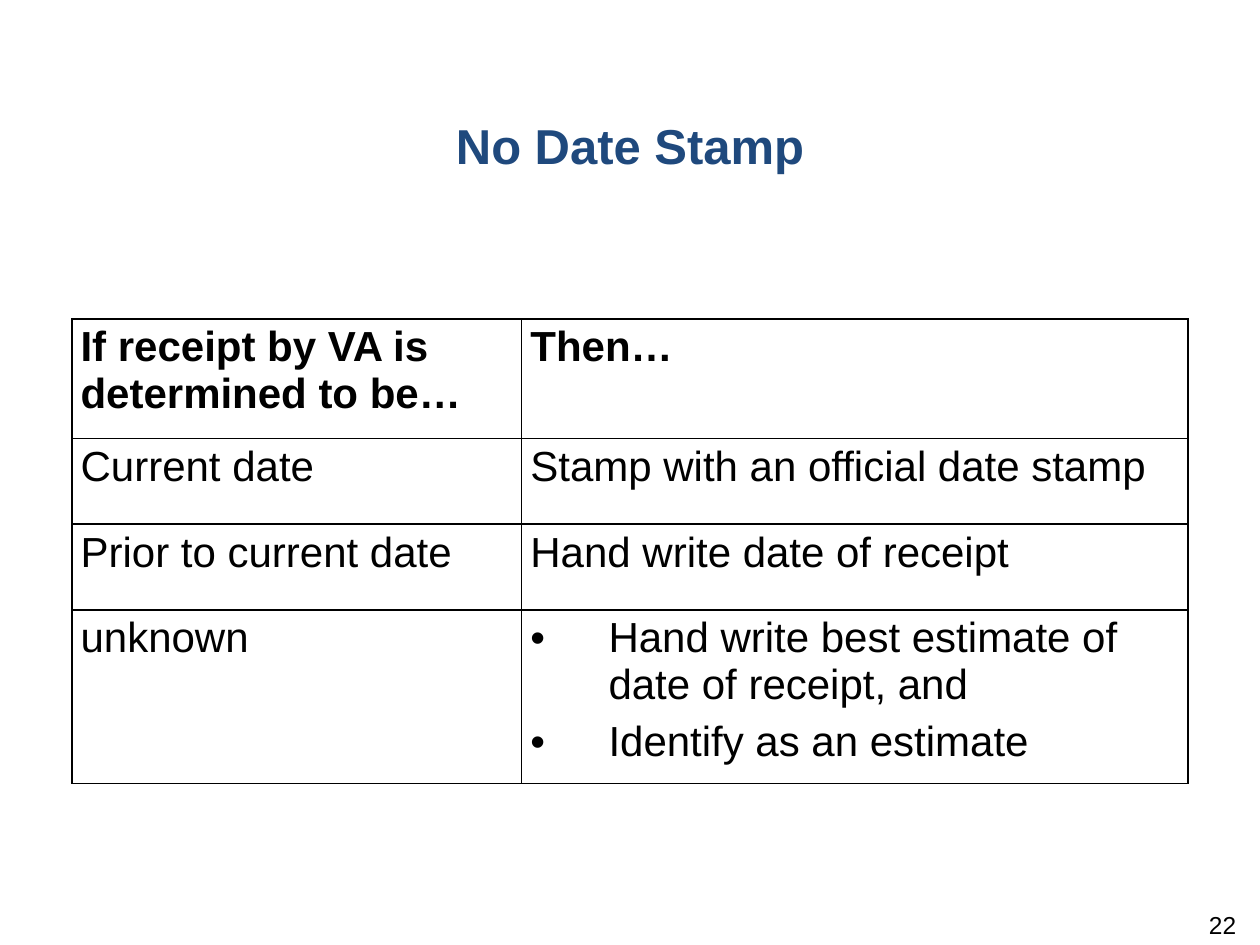
from dataclasses import dataclass

from lxml import etree
from pptx import Presentation
from pptx.dml.color import RGBColor
from pptx.enum import text
from pptx.oxml.ns import qn
from pptx.util import Inches, Pt


@dataclass(frozen=True)
class Theme:
    font: str = "Arial"
    title: str = "1F497D"
    ink: str = "000000"
    paper: str = "FFFFFF"
    title_size: int = 28
    table_size: int = 24
    number_size: int = 14
    border: int = 1
    space_after: int = 6


THEME = Theme()
BULLET_INDENT = 0.62
COLUMNS = [3.57, 5.29]
ROW_HEIGHTS = [0.95, 0.68, 0.68, 1.38]
ROWS = [
    ("If receipt by VA is determined to be…", "Then…"),
    ("Current date", "Stamp with an official date stamp"),
    ("Prior to current date", "Hand write date of receipt"),
    ("unknown", ["Hand write best estimate of date of receipt, and",
                 "Identify as an estimate"]),
]


def add_bullet(p):
    pPr = p._p.get_or_add_pPr()
    pPr.set("marL", str(Inches(BULLET_INDENT)))
    pPr.set("indent", str(-Inches(BULLET_INDENT)))
    etree.SubElement(pPr, qn("a:buFont")).set("typeface", THEME.font)
    etree.SubElement(pPr, qn("a:buChar")).set("char", "•")


def write(tf, content, size, color=THEME.ink, bold=False, align=text.PP_ALIGN.LEFT):
    """Write a string as one paragraph, or a list as bulleted paragraphs."""
    bulleted = isinstance(content, list)
    for i, line in enumerate(content if bulleted else [content]):
        p = tf.add_paragraph() if i else tf.paragraphs[0]
        if bulleted:
            add_bullet(p)
        p.alignment = align
        p.space_before = Pt(0)
        p.space_after = Pt(THEME.space_after)
        r = p.add_run()
        r.text = line
        r.font.name = THEME.font
        r.font.size = Pt(size)
        r.font.bold = bold
        r.font.color.rgb = RGBColor.from_string(color)


def set_borders(cell):
    tcPr = cell._tc.get_or_add_tcPr()
    for i, side in enumerate(("lnL", "lnR", "lnT", "lnB")):
        ln = etree.Element(qn(f"a:{side}"), w=str(Pt(THEME.border)))
        fill = etree.SubElement(ln, qn("a:solidFill"))
        etree.SubElement(fill, qn("a:srgbClr")).set("val", THEME.ink)
        tcPr.insert(i, ln)


def add_title(s, left, top, width, height):
    sp = s.shapes.title
    sp.left, sp.top, sp.width, sp.height = map(Inches, (left, top, width, height))
    tf = sp.text_frame
    tf.vertical_anchor = text.MSO_ANCHOR.TOP
    write(tf, "No Date Stamp", THEME.title_size, color=THEME.title, bold=True,
          align=text.PP_ALIGN.CENTER)


def add_receipt_table(s, left, top):
    table = s.shapes.add_table(len(ROWS), len(COLUMNS), Inches(left), Inches(top),
                               Inches(sum(COLUMNS)), Inches(sum(ROW_HEIGHTS))).table
    table.horz_banding = False
    for column, width in zip(table.columns, COLUMNS):
        column.width = Inches(width)
    for i, (row, height) in enumerate(zip(table.rows, ROW_HEIGHTS)):
        row.height = Inches(height)
        for cell, content in zip(row.cells, ROWS[i]):
            cell.margin_left = cell.margin_right = Inches(0.07)
            cell.margin_top = cell.margin_bottom = Inches(0.04)
            cell.fill.solid()
            cell.fill.fore_color.rgb = RGBColor.from_string(THEME.paper)
            set_borders(cell)
            write(cell.text_frame, content, THEME.table_size, bold=i == 0)


def add_page_number(s, left, top, width, height):
    tf = s.shapes.add_textbox(*map(Inches, (left, top, width, height))).text_frame
    tf.word_wrap = True
    tf.margin_top = 0
    write(tf, "22", THEME.number_size, align=text.PP_ALIGN.RIGHT)


def main():
    prs = Presentation()
    prs.slide_width, prs.slide_height = Inches(10), Inches(7.5)
    s = prs.slides.add_slide(prs.slide_layouts.get_by_name("Title Only"))
    add_title(s, 0, 0.87, 10, 1.19)
    add_page_number(s, 7.58, 7.22, 2.33, 0.4)
    add_receipt_table(s, 0.57, 2.53)
    prs.save("out.pptx")


if __name__ == "__main__":
    main()
